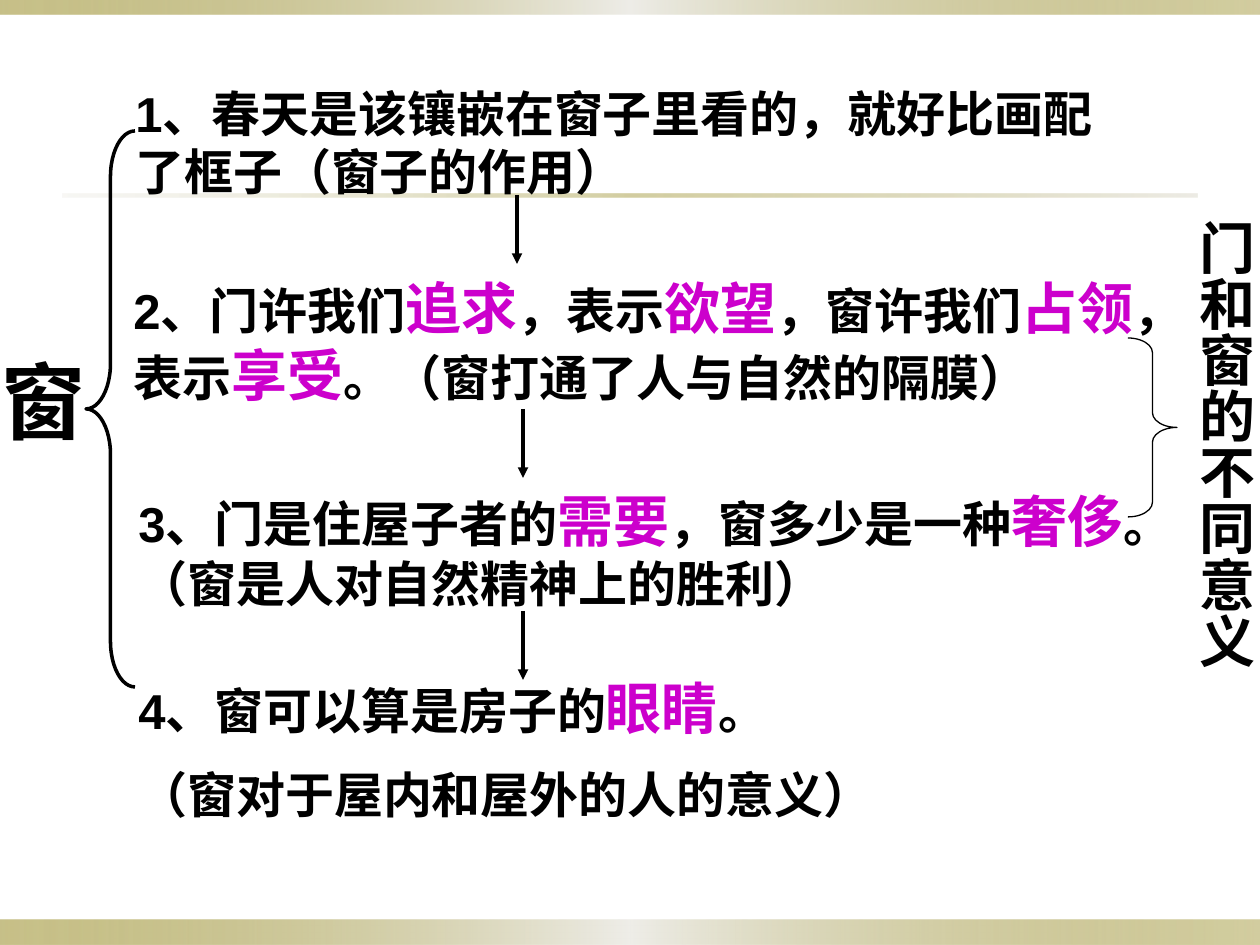
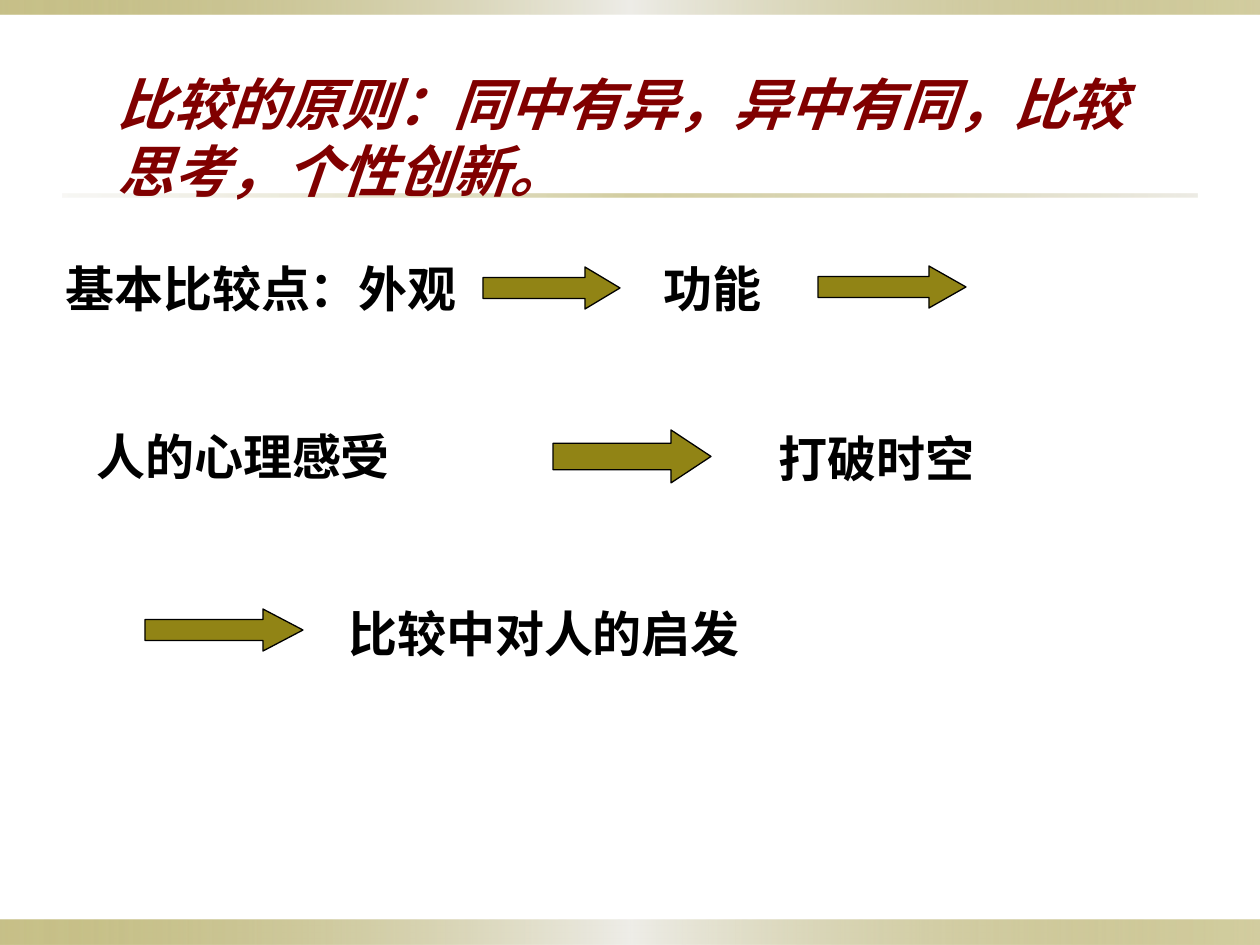
from lxml import etree
from pptx import Presentation
from pptx.dml.color import RGBColor
from pptx.enum.shapes import MSO_CONNECTOR, MSO_SHAPE
from pptx.oxml import parse_xml
from pptx.oxml.ns import qn
from pptx.util import Emu, Pt

RECT = MSO_SHAPE.RECTANGLE
LEFT_BRACE = MSO_SHAPE.LEFT_BRACE
RIGHT_BRACE = MSO_SHAPE.RIGHT_BRACE
RIGHT_ARROW = MSO_SHAPE.RIGHT_ARROW
STRAIGHT = MSO_CONNECTOR.STRAIGHT
DRAWING_NS = "http://schemas.openxmlformats.org/drawingml/2006/main"

PX = 914400 / 126
WIDTH, HEIGHT = 1260, 945
BLACK, OLIVE, MAROON, MAGENTA = "000000", "918415", "800000", "CC00CC"
PALE, SAND = "EEEDE8", "DCD9CC"

# Gradient stops: position %, colour, opacity %
BAND_STOPS = [(0, OLIVE, 50), (50, PALE, 100), (100, OLIVE, 40)]
RULE_STOPS = [(0, SAND, 20), (50, OLIVE, 40), (100, SAND, 50)]
FRAME = [
    ((0, 920, 1260, 25), BAND_STOPS),
    ((0, 0, 1260, 15), BAND_STOPS),
    ((63, 194, 1134, 3), RULE_STOPS),
]

# Window slide: each point is a list of paragraphs; *stars* mark key words
POINTS = [
    ((123, 77, 993, 130), ["1、春天是该镶嵌在窗子里看的，就好比画配了框子（窗子的作用）"]),
    ((121, 267, 1052, 147), ["2、门许我们*追求*，表示*欲望*，窗许我们*占领*，表示*享受*。（窗打通了人与自然的隔膜）"]),
    ((126, 480, 1071, 139), ["3、门是住屋子者的*需要*，窗多少是一种*奢侈*。（窗是人对自然精神上的胜利）"]),
    ((126, 667, 992, 169), ["4、窗可以算是房子的*眼睛*。", "（窗对于屋内和屋外的人的意义）"]),
]
TOPIC = ((-11, 343, 95, 113), ["窗"])
CONTRAST = ((1173, 208, 92, 496), ["门和窗的不同意义"])
BRACES = [
    (LEFT_BRACE, (86, 131, 49, 556), 0.93, 2),
    (RIGHT_BRACE, (1128, 338, 49, 179), 0.3, 0.75),
]
DOWN_ARROWS = [(517, 195), (523, 409), (523, 611)]
DOWN_LENGTH = 69

# Comparison slide
PRINCIPLE = ((105, 63, 1081, 147), ["比较的原则：同中有异，异中有同，比较思考，个性创新。"])
STEPS = [
    ((53, 252, 567, 72), ["基本比较点：外观"]),
    ((651, 252, 189, 72), ["功能"]),
    ((84, 420, 347, 72), ["人的心理感受"]),
    ((766, 422, 252, 72), ["打破时空"]),
    ((336, 597, 504, 72), ["比较中对人的启发"]),
]
# Each arrow: box, length of its head
STEP_ARROWS = [
    ((483, 267, 137, 42), 35),
    ((818, 266, 148, 42), 37),
    ((553, 430, 158, 53), 40),
    ((145, 609, 158, 42), 40),
]


def emu(*lengths):
    return [Emu(round(n * PX)) for n in lengths]


def rgb(color):
    return RGBColor.from_string(color)


def add_shape(s, kind, box, fill=None, line=None, weight=0.75):
    sp = s.shapes.add_shape(kind, *emu(*box))
    sp.shadow.inherit = False
    if fill:
        sp.fill.solid()
        sp.fill.fore_color.rgb = rgb(fill)
    else:
        sp.fill.background()
    if line:
        sp.line.color.rgb = rgb(line)
        sp.line.width = Pt(weight)
    else:
        sp.line.fill.background()
    return sp


def set_gradient(sp, stops):
    """Replace the empty fill by a left-to-right gradient with opacity."""
    marks = "".join(
        f'<a:gs pos="{pos * 1000}"><a:srgbClr val="{color}">'
        f'<a:alpha val="{opacity * 1000}"/></a:srgbClr></a:gs>'
        for pos, color, opacity in stops)
    grad = parse_xml(f'<a:gradFill xmlns:a="{DRAWING_NS}" rotWithShape="1">'
                     f'<a:gsLst>{marks}</a:gsLst><a:lin ang="0" scaled="1"/></a:gradFill>')
    props = sp._element.spPr
    props.replace(props.find(qn("a:noFill")), grad)


def add_text(s, box, paragraphs, size=28, font="Arial", color=BLACK,
             italic=False, vertical=False):
    tf = s.shapes.add_textbox(*emu(*box)).text_frame
    tf.word_wrap = True
    if vertical:
        tf._txBody.bodyPr.set("vert", "eaVert")
    for i, text in enumerate(paragraphs):
        p = tf.add_paragraph() if i else tf.paragraphs[0]
        if i:
            p.space_before = Pt(size / 2)
        for j, part in enumerate(text.split("*")):
            key = j % 2 == 1
            r = p.add_run()
            r.text = part
            r.font.name = font
            r.font.size = Pt(size + 4 if key else size)
            r.font.bold = True
            r.font.italic = italic
            r.font.color.rgb = rgb(MAGENTA if key else color)


def add_down_arrow(s, x, y):
    c = s.shapes.add_connector(STRAIGHT, *emu(x, y, x, y + DOWN_LENGTH))
    c.line.color.rgb = rgb(BLACK)
    c.line.width = Pt(2)
    etree.SubElement(c.line._get_or_add_ln(), qn("a:tailEnd"), type="triangle")
    etree.SubElement(c._element.spPr, qn("a:effectLst"))


def add_slide(prs):
    s = prs.slides.add_slide(prs.slide_layouts[6])
    for box, stops in FRAME:
        set_gradient(add_shape(s, RECT, box), stops)
    return s


def build_window_slide(prs):
    s = add_slide(prs)
    add_text(s, *TOPIC, size=48)
    for kind, box, curve, weight in BRACES:
        brace = add_shape(s, kind, box, line=BLACK, weight=weight)
        brace.adjustments[0] = curve
        brace.adjustments[1] = 0.5
    for box, paragraphs in POINTS:
        add_text(s, box, paragraphs)
    for x, y in DOWN_ARROWS:
        add_down_arrow(s, x, y)
    add_text(s, *CONTRAST, size=32, vertical=True)


def build_comparison_slide(prs):
    s = add_slide(prs)
    add_text(s, *PRINCIPLE, size=32, font="Lato", color=MAROON, italic=True)
    for box, paragraphs in STEPS:
        add_text(s, box, paragraphs, font="Lato")
    for box, head in STEP_ARROWS:
        arrow = add_shape(s, RIGHT_ARROW, box, fill=OLIVE, line=BLACK)
        arrow.adjustments[0] = 0.5
        arrow.adjustments[1] = head / box[3]


def main():
    prs = Presentation()
    prs.slide_width, prs.slide_height = emu(WIDTH, HEIGHT)
    build_window_slide(prs)
    build_comparison_slide(prs)
    prs.save("out.pptx")


if __name__ == "__main__":
    main()
